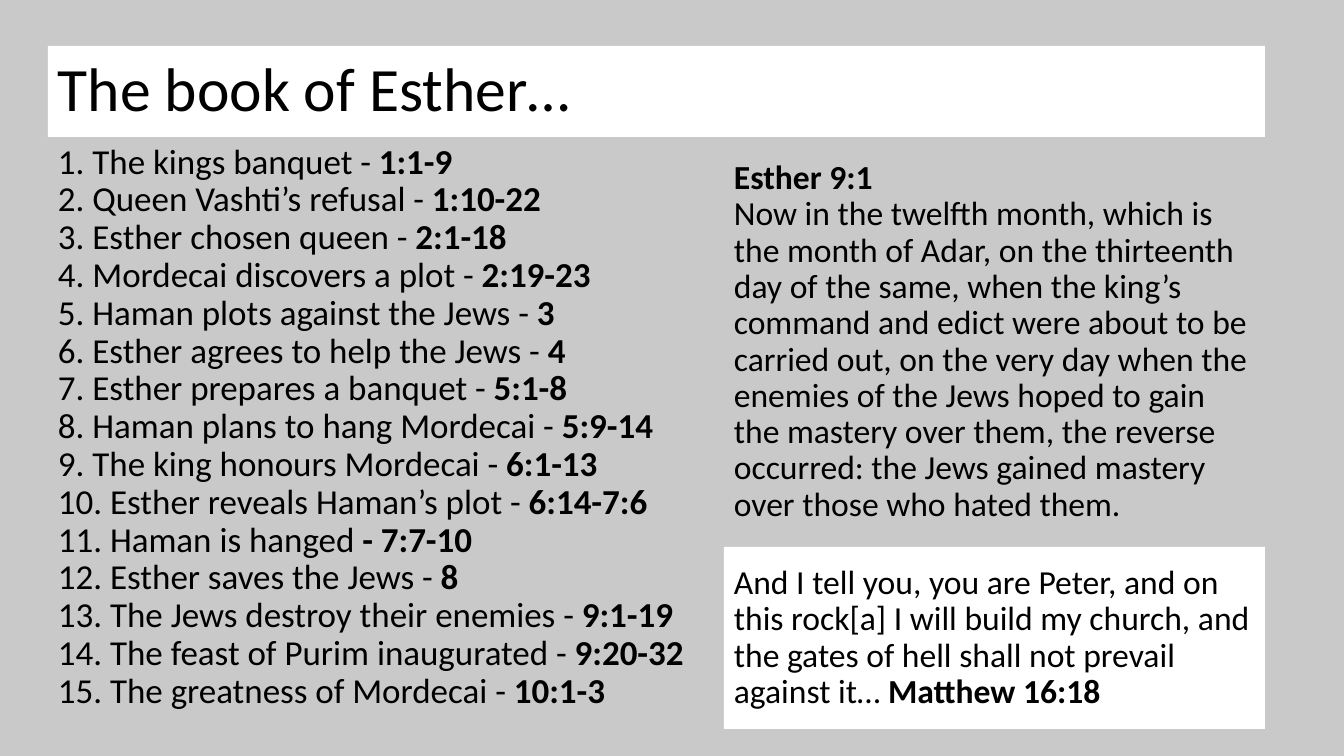
import pptx
import pptx.util
import pptx.dml.color
import pptx.enum.shapes
import pptx.enum.text

PX = 914400 / 100.8
TOP = pptx.enum.text.MSO_ANCHOR.TOP
MID = pptx.enum.text.MSO_ANCHOR.MIDDLE
RECT = pptx.enum.shapes.MSO_SHAPE.RECTANGLE
rgb = pptx.dml.color.RGBColor.from_string

theme = {
    "font": "Calibri", "ink": rgb("000000"),
    "back": rgb("C9C9C9"), "panel": rgb("FFFFFF"),
    "title": 44, "list": 25, "verse": 24,
}


def px(n):
    return round(n * PX)


def write(shape, size, anchor, lines):
    """Fill a shape with lines, each a list of (text, bold) runs."""
    frame = shape.text_frame
    frame.word_wrap = True
    frame.vertical_anchor = anchor
    for i, line in enumerate(lines):
        para = frame.add_paragraph() if i else frame.paragraphs[0]
        para.alignment = pptx.enum.text.PP_ALIGN.LEFT
        para.line_spacing = 0.9
        for text, bold in line:
            run = para.add_run()
            run.text = text
            form = {"name": theme["font"], "size": pptx.util.Pt(size), "bold": bold}
            for key, value in form.items():
                setattr(run.font, key, value)
            run.font.color.rgb = theme["ink"]


# Slide
deck = pptx.Presentation()
deck.slide_width, deck.slide_height = px(1344), px(756)
slide = deck.slides.add_slide(deck.slide_layouts[6])
slide.background.fill.solid()
slide.background.fill.fore_color.rgb = theme["back"]

# Text of the chapter list: event, joining mark in bold or not, passage
events = [
    ("The kings banquet - ", "1:1-9"),
    ("Queen Vashti’s refusal - ", "1:10-22"),
    ("Esther chosen queen - ", "2:1-18"),
    ("Mordecai discovers a plot - ", "2:19-23"),
    ("Haman plots against the Jews - ", "3"),
    ("Esther agrees to help the Jews - ", "4"),
    ("Esther prepares a banquet - ", "5:1-8"),
    ("Haman plans to hang Mordecai - ", "5:9-14"),
    ("The king honours Mordecai - ", "6:1-13"),
    ("Esther reveals Haman’s plot - ", "6:14-7:6"),
    ("Haman is hanged ", "- 7:7-10"),
    ("Esther saves the Jews - ", "8"),
    ("The Jews destroy their enemies - ", "9:1-19"),
    ("The feast of Purim inaugurated - ", "9:20-32"),
    ("The greatness of Mordecai - ", "10:1-3"),
]
chapters = [[(f"{n}. {event}", False), (passage, True)]
            for n, (event, passage) in enumerate(events, 1)]

# Text of the title, verse and quote
title = [[("The book of Esther…", False)]]
verse = [
    [("Esther 9:1", True)],
    [("Now in the twelfth month, which is the month of Adar, on the thirteenth "
      "day of the same, when the king’s command and edict were about to be "
      "carried out, on the very day when the enemies of the Jews hoped to gain "
      "the mastery over them, the reverse occurred: the Jews gained mastery "
      "over those who hated them.", False)],
]
quote = [[
    ("And I tell you, you are Peter, and on this rock[a] I will build my church, "
     "and the gates of hell shall not prevail against it… ", False),
    ("Matthew 16:18", True),
]]

# Blocks: box, white panel or not, type size, anchor, lines
blocks = [
    ((48, 139, 652, 590), False, "list", TOP, chapters),
    ((48, 46, 1217, 91), True, "title", MID, title),
    ((724, 137, 541, 410), False, "verse", MID, verse),
    ((724, 547, 541, 182), True, "verse", MID, quote),
]
for box, panel, size, anchor, lines in blocks:
    place = [px(n) for n in box]
    if panel:
        shape = slide.shapes.add_shape(RECT, *place)
        shape.shadow.inherit = False
        shape.fill.solid()
        shape.fill.fore_color.rgb = theme["panel"]
        shape.line.fill.background()
    else:
        shape = slide.shapes.add_textbox(*place)
    write(shape, theme[size], anchor, lines)

deck.save("out.pptx")
